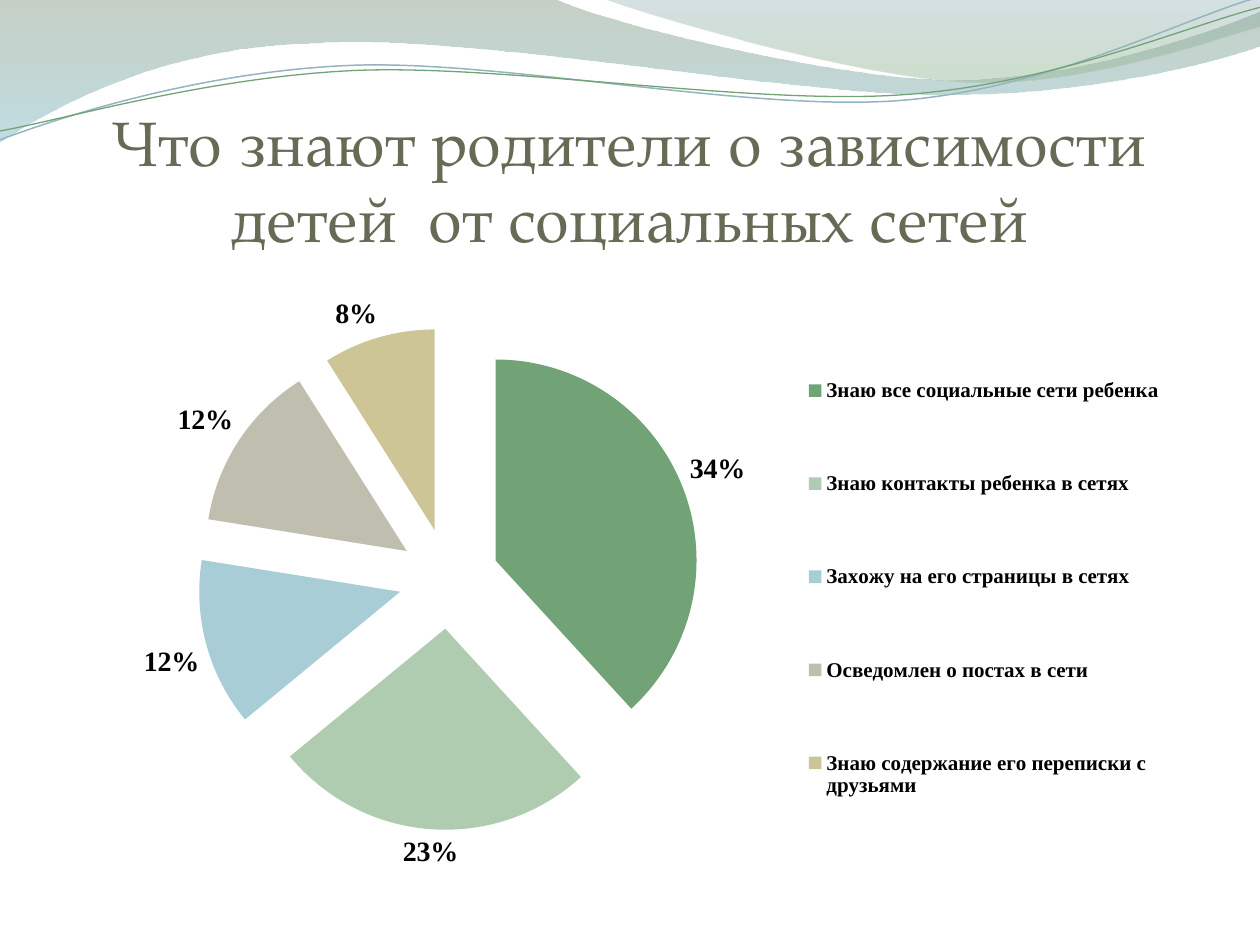
from lxml import etree
from pptx import Presentation
from pptx import util as u
from pptx.chart.data import CategoryChartData
from pptx.dml.color import RGBColor
from pptx.enum import chart as charts, text
from pptx.oxml.ns import qn


class Theme:
    TITLE_FONT, CHART_FONT = "TeX Gyre Pagella", "Times New Roman"
    TITLE_SIZE, LABEL_SIZE, LEGEND_SIZE, CHART_SIZE = 36, 16, 12, 10
    TITLE, INK = "676A55", "000000"
    SLICES = ["72A376", "B0CCB0", "A8CDD7", "C0BEAF", "CEC597"]
    # gradient stops: position, colour, opacity in percent
    WIDE_WAVE = [(0, "809980", 45), (1, "8DC1CF", 55)]
    SHORT_WAVE = [(0, "779BA4", 30), (0.8, "96B996", 45)]
    BLUE_LINE, GREEN_LINE = "94B5BE", "72A376"


# Outlines in cm: a pair is a straight step, six numbers are a Bezier curve.
WIDE_WAVE = [
    (0, 0), (11.18, -0.03),
    (12.09, 0.43, 16.87, 1.6, 19.25, 1.6),
    (21.67, 1.6, 24.33, 0.66, 25.4, 0.23),
    (25.43, 0.91),
    (24.97, 1.12, 22.1, 1.93, 18.95, 1.91),
    (15.8, 1.91, 9.7, 0.71, 6.53, 0.86),
    (3.28, 0.91, 1.17, 2.11, -0.03, 2.87),
    (0, 0),
]
SHORT_WAVE = [
    (12.17, -0.03),
    (12.93, 0.28, 17.32, 1.57, 19.53, 1.65),
    (21.74, 1.75, 24.41, 0.81, 25.4, 0.53),
    (25.4, 0),
    (12.17, -0.03),
]
BLUE_LINE = [
    (0, 2.82),
    (1.22, 2.36, 4.01, 1.45, 7.04, 1.32),
    (10.03, 1.19, 15.06, 2.26, 18.11, 2.03),
    (21.16, 1.8, 23.83, 0.38, 25.35, -0.05),
]
GREEN_LINE = [
    (0, 2.64),
    (1.19, 2.44, 4.17, 1.55, 7.19, 1.42),
    (10.24, 1.3, 15.16, 2.13, 18.21, 1.91),
    (21.23, 1.7, 23.9, 0.53, 25.4, 0.15),
]
ANSWERS = {
    "Знаю все социальные сети ребенка": 0.34,
    "Знаю контакты ребенка в сетях": 0.23,
    "Захожу на его страницы в сетях": 0.12,
    "Осведомлен о постах в сети": 0.12,
    "Знаю содержание его переписки с друзьями": 0.08,
}


def apply(target, values):
    for name, value in values.items():
        setattr(target, name, value)


def set_font(font, name, size, colour, bold=False):
    apply(font, {"name": name, "size": u.Pt(size), "bold": bold})
    font.color.rgb = RGBColor.from_string(colour)


def bend(shape, steps):
    """Turn the straight steps that have control points into Bezier curves."""
    for line, step in zip(list(shape.element.iter(qn("a:lnTo"))), steps):
        if len(step) == 2:
            continue
        curve = etree.Element(qn("a:cubicBezTo"))
        for x, y in zip(step[::2], step[1::2]):
            point = etree.SubElement(curve, qn("a:pt"))
            point.set("x", str(u.Cm(x) - shape.left))
            point.set("y", str(u.Cm(y) - shape.top))
        line.getparent().replace(line, curve)


def set_layout(parent, index, inner=False, **fractions):
    """Place a chart part by fractions of the chart's size."""
    for old in parent.findall(qn("c:layout")):
        parent.remove(old)
    layout = etree.Element(qn("c:layout"))
    manual = etree.SubElement(layout, qn("c:manualLayout"))
    values = {"layoutTarget": "inner"} if inner else {}
    values.update(xMode="edge", yMode="edge", **fractions)
    for name, value in values.items():
        etree.SubElement(manual, qn("c:" + name)).set("val", str(value))
    parent.insert(index, layout)


class Painter:
    def __init__(self, theme, page):
        self.theme, self.page = theme, page

    def outline(self, outline, closed):
        start, *ends = [tuple(map(u.Cm, step[-2:])) for step in outline]
        builder = self.page.shapes.build_freeform(*start, scale=1.0)
        builder.add_line_segments(ends, close=closed)
        shape = builder.convert_to_shape()
        bend(shape, outline[1:])
        shape.shadow.inherit = False
        return shape

    def wave(self, outline, stops):
        shape = self.outline(outline, closed=True)
        shape.line.fill.background()
        shape.fill.gradient()
        shape.fill.gradient_angle = 270
        for stop, (position, colour, _) in zip(shape.fill.gradient_stops, stops):
            stop.position = position
            stop.color.rgb = RGBColor.from_string(colour)
        for node, (_, _, opacity) in zip(shape.element.iter(qn("a:srgbClr")), stops):
            etree.SubElement(node, qn("a:alpha")).set("val", str(opacity * 1000))

    def curve(self, outline, colour, width):
        shape = self.outline(outline, closed=False)
        shape.fill.background()
        shape.line.color.rgb = RGBColor.from_string(colour)
        shape.line.width = u.Pt(width)

    def title(self, words, left, top, width, height):
        box = self.page.shapes.add_textbox(*map(u.Cm, (left, top, width, height)))
        apply(box.text_frame, {
            "word_wrap": True, "vertical_anchor": text.MSO_ANCHOR.BOTTOM,
            "margin_left": 0, "margin_right": 0,
            "margin_top": u.Cm(0.13), "margin_bottom": 0,
        })
        para = box.text_frame.paragraphs[0]
        para.alignment = text.PP_ALIGN.CENTER
        span = para.add_run()
        span.text = words
        set_font(span.font, self.theme.TITLE_FONT, self.theme.TITLE_SIZE, self.theme.TITLE)

    def pie(self, answers, left, top, width, height):
        theme = self.theme
        data = CategoryChartData(number_format="0%")
        data.categories = list(answers)
        data.add_series("Series 1", list(answers.values()))
        chart = self.page.shapes.add_chart(
            charts.XL_CHART_TYPE.PIE, *map(u.Cm, (left, top, width, height)), data).chart
        apply(chart, {"has_title": False, "has_legend": True})
        set_font(chart.font, theme.TITLE_FONT, theme.CHART_SIZE, theme.INK)

        apply(chart.legend, {"position": charts.XL_LEGEND_POSITION.RIGHT,
                             "include_in_layout": False})
        set_font(chart.legend.font, theme.CHART_FONT, theme.LEGEND_SIZE, theme.INK, True)

        plot = chart.plots[0]
        plot.vary_by_categories = True
        series = plot.series[0]
        for index, colour in enumerate(theme.SLICES):
            fill = series.points[index].format.fill
            fill.solid()
            fill.fore_color.rgb = RGBColor.from_string(colour)
        explosion = etree.Element(qn("c:explosion"))
        explosion.set("val", "25")
        chart.element.xpath("//c:ser/c:dPt")[0].addprevious(explosion)

        labels = series.data_labels
        apply(labels, {
            "show_value": True, "show_percentage": False,
            "number_format": "0%", "number_format_is_linked": False,
            "position": charts.XL_LABEL_POSITION.OUTSIDE_END,
        })
        set_font(labels.font, theme.CHART_FONT, theme.LABEL_SIZE, theme.INK, True)

        set_layout(chart.element.xpath("//c:plotArea")[0], 0, inner=True,
                   x=0.1, y=0.08, w=0.46, h=0.83)
        set_layout(chart.element.xpath("//c:legend")[0], 1,
                   x=0.65, y=0.05, w=0.34, h=0.92)


def main():
    deck = Presentation()
    apply(deck, {"slide_width": u.Cm(25.4), "slide_height": u.Cm(19.05)})
    painter = Painter(Theme, deck.slides.add_slide(deck.slide_layouts[6]))
    painter.wave(WIDE_WAVE, Theme.WIDE_WAVE)
    painter.wave(SHORT_WAVE, Theme.SHORT_WAVE)
    painter.curve(BLUE_LINE, Theme.BLUE_LINE, 0.85)
    painter.curve(GREEN_LINE, Theme.GREEN_LINE, 0.75)
    painter.title("Что знают родители о зависимости детей  от социальных сетей",
                  1.27, 1.96, 22.86, 3.18)
    painter.pie(ANSWERS, 1.78, 5.61, 22.02, 12.24)
    deck.save("out.pptx")


if __name__ == "__main__":
    main()
